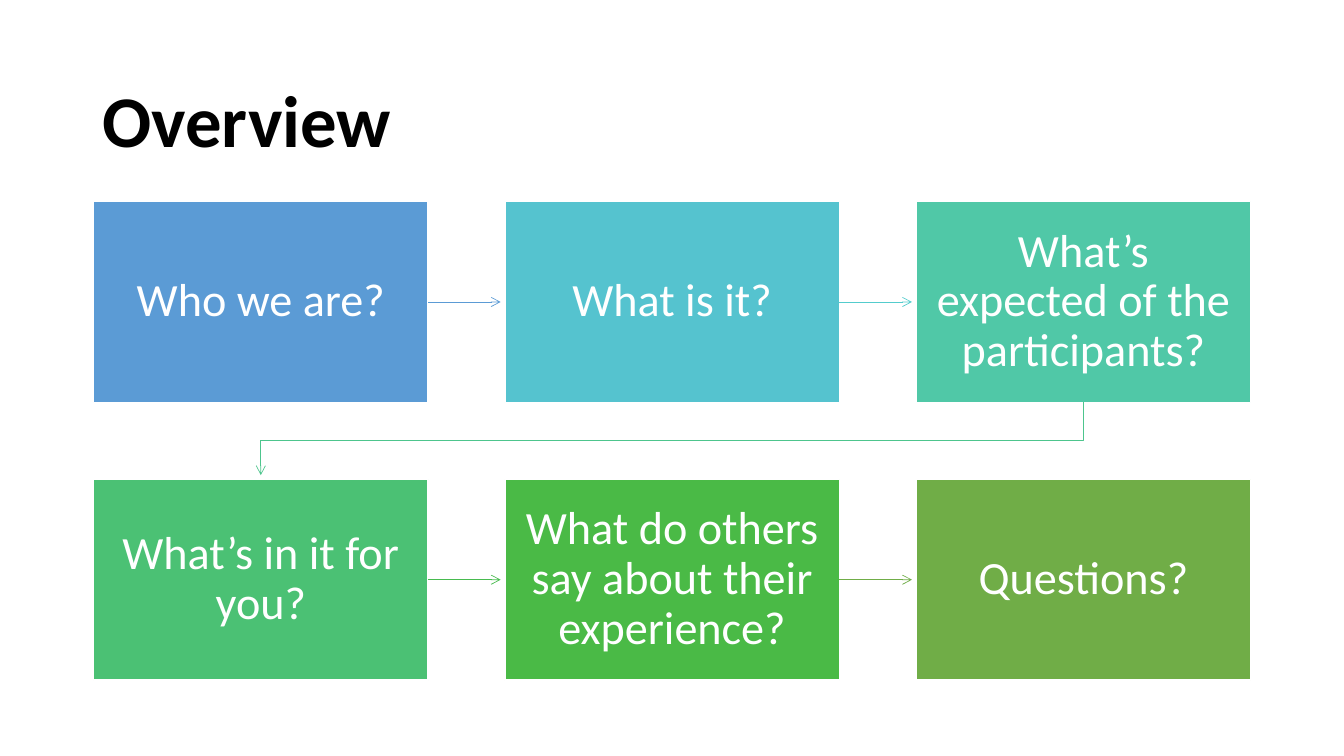
from lxml.etree import SubElement
from pptx import Presentation
from pptx.dml.color import RGBColor
from pptx.enum.shapes import MSO_CONNECTOR, MSO_SHAPE
from pptx.enum.text import MSO_ANCHOR, PP_ALIGN
from pptx.oxml.ns import qn
from pptx.util import Pt

COLORS = {
    "title": "000000",
    "white": "FFFFFF",
    "blue": "5B9BD5",
    "cyan": "55C3CF",
    "cyan_arrow": "54CCCD",
    "teal": "50C8A7",
    "teal_arrow": "4DC58D",
    "mint": "4BC174",
    "mint_arrow": "48BB4F",
    "green": "4ABA46",
    "olive": "70AD47",
}
STEPS = [
    ("Who we are?", "blue", "blue"),
    ("What is it?", "cyan", "cyan_arrow"),
    ("What’s expected of the participants?", "teal", "teal_arrow"),
    ("What’s in it for you?", "mint", "mint_arrow"),
    ("What do others say about their experience?", "green", "olive"),
    ("Questions?", "olive", None),
]
COLUMNS = 3
LEFT, TOP = 66.8, 144
BOX_WIDTH, BOX_HEIGHT = 239, 143.4
COLUMN_STEP, ROW_STEP = 293.8, 198.4
ARROW_GAP = 3


def color(name):
    return RGBColor.from_string(COLORS[name])


def write_text(shape, text, size, color_name, alignment, bold=False):
    frame = shape.text_frame
    frame.text = text
    frame.word_wrap = True
    frame.vertical_anchor = MSO_ANCHOR.MIDDLE
    paragraph = frame.paragraphs[0]
    paragraph.alignment = alignment
    paragraph.line_spacing = 0.9
    font = paragraph.runs[0].font
    font.name = "Calibri"
    font.size = Pt(size)
    font.bold = bold
    font.color.rgb = color(color_name)


def add_title(slide, text):
    title = slide.shapes.add_textbox(Pt(66), Pt(44), Pt(828), Pt(89))
    write_text(title, text, 52, "title", PP_ALIGN.LEFT, bold=True)


def add_box(slide, index, text, fill):
    row, column = divmod(index, COLUMNS)
    box = slide.shapes.add_shape(
        MSO_SHAPE.RECTANGLE,
        Pt(LEFT + column * COLUMN_STEP),
        Pt(TOP + row * ROW_STEP),
        Pt(BOX_WIDTH),
        Pt(BOX_HEIGHT),
    )
    box.shadow.inherit = False
    box.fill.solid()
    box.fill.fore_color.rgb = color(fill)
    box.line.color.rgb = color("white")
    box.line.width = Pt(1)
    frame = box.text_frame
    frame.margin_left = frame.margin_right = Pt(11.7)
    frame.margin_top = frame.margin_bottom = Pt(12.3)
    write_text(box, text, 33, "white", PP_ALIGN.CENTER)
    return box


def style_arrow(arrow, color_name):
    arrow.line.color.rgb = color(color_name)
    arrow.line.width = Pt(0.5)
    SubElement(arrow.line._get_or_add_ln(), qn("a:tailEnd"), type="arrow")


def add_straight_arrow(slide, source, target, color_name):
    middle = source.top + source.height // 2
    arrow = slide.shapes.add_connector(
        MSO_CONNECTOR.STRAIGHT,
        source.left + source.width,
        middle,
        target.left - Pt(ARROW_GAP),
        middle,
    )
    arrow.begin_connect(source, 3)
    style_arrow(arrow, color_name)
    SubElement(arrow._element.spPr, qn("a:effectLst"))


def add_row_arrow(slide, source, target, color_name):
    start_x = source.left + source.width // 2
    start_y = source.top + source.height
    end_x = target.left + target.width // 2
    turn_y = (start_y + target.top) // 2
    builder = slide.shapes.build_freeform(start_x, start_y)
    builder.add_line_segments(
        [(start_x, turn_y), (end_x, turn_y), (end_x, target.top - Pt(ARROW_GAP))],
        close=False,
    )
    arrow = builder.convert_to_shape()
    arrow.fill.background()
    arrow.shadow.inherit = False
    style_arrow(arrow, color_name)


def main():
    presentation = Presentation()
    presentation.slide_width = Pt(960)
    presentation.slide_height = Pt(540)
    slide = presentation.slides.add_slide(presentation.slide_layouts[6])
    add_title(slide, "Overview")
    boxes = [add_box(slide, index, text, fill) for index, (text, fill, _) in enumerate(STEPS)]
    for source, target, (_, _, arrow_color) in zip(boxes, boxes[1:], STEPS):
        add_arrow = add_straight_arrow if source.top == target.top else add_row_arrow
        add_arrow(slide, source, target, arrow_color)
    presentation.save("out.pptx")


if __name__ == "__main__":
    main()
